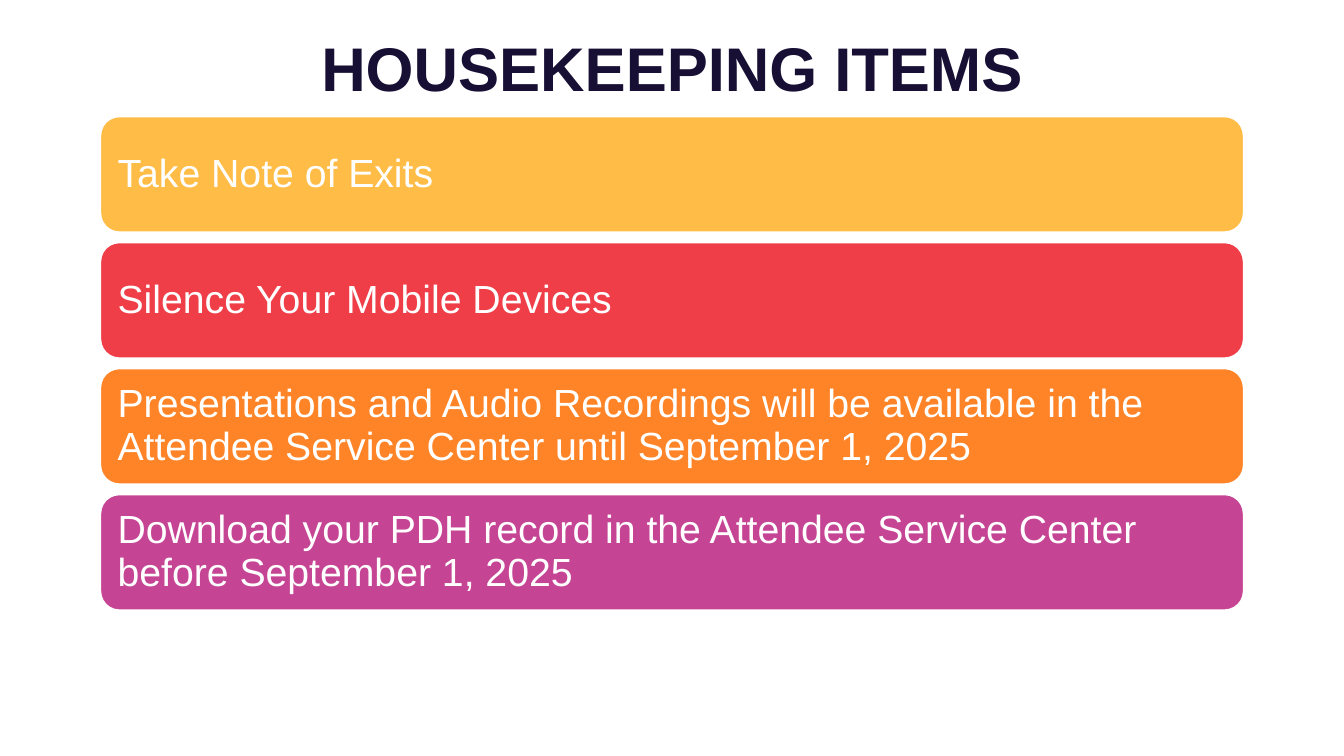
from dataclasses import dataclass

from pptx import Presentation
from pptx import util as u
from pptx.dml import color
from pptx.enum import shapes, text


@dataclass(frozen=True)
class Theme:
    font: str = "Arial"
    title_size: int = 44
    item_size: int = 28
    title_color: str = "180F34"
    white: str = "FFFFFF"


THEME = Theme()

ITEMS = [
    ("Take Note of Exits", "FFBD47"),
    ("Silence Your Mobile Devices", "EF3E47"),
    ("Presentations and Audio Recordings will be available in the "
     "Attendee Service Center until September 1, 2025", "FF8427"),
    ("Download your PDH record in the Attendee Service Center "
     "before September 1, 2025", "C64494"),
]


def rgb(value):
    return color.RGBColor.from_string(value)


def write_text(shape, words, *, size, fill, bold=False,
               align=text.PP_ALIGN.LEFT, spacing=1.0, insets=(0.1, 0.05)):
    """Put one formatted paragraph, vertically centred, into a shape."""
    frame = shape.text_frame
    frame.word_wrap = True
    frame.vertical_anchor = text.MSO_ANCHOR.MIDDLE
    frame.margin_left = frame.margin_right = u.Inches(insets[0])
    frame.margin_top = frame.margin_bottom = u.Inches(insets[1])
    paragraph = frame.paragraphs[0]
    paragraph.alignment = align
    paragraph.line_spacing = spacing
    run = paragraph.add_run()
    run.text = words
    run.font.name = THEME.font
    run.font.size = u.Pt(size)
    run.font.bold = bold
    run.font.color.rgb = rgb(fill)


def add_title(slide, words, left, top, width, height):
    box = slide.shapes.add_textbox(*map(u.Inches, (left, top, width, height)))
    write_text(box, words, size=THEME.title_size, fill=THEME.title_color,
               bold=True, align=text.PP_ALIGN.CENTER)


def add_item_bars(slide, items, left, top, width, height, gap=0.09):
    """Stack equal rounded bars, one per item, in the given box."""
    bar_height = (height - gap * (len(items) - 1)) / len(items)
    for index, (words, fill) in enumerate(items):
        bar_top = top + index * (bar_height + gap)
        bar = slide.shapes.add_shape(
            shapes.MSO_SHAPE.ROUNDED_RECTANGLE,
            *map(u.Inches, (left, bar_top, width, bar_height)))
        bar.shadow.inherit = False
        bar.fill.solid()
        bar.fill.fore_color.rgb = rgb(fill)
        bar.line.color.rgb = rgb(THEME.white)
        bar.line.width = u.Pt(2)
        write_text(bar, words, size=THEME.item_size, fill=THEME.white,
                   spacing=0.9, insets=(0.12, 0.12))


def main():
    presentation = Presentation()
    presentation.slide_width = u.Inches(13.33)
    presentation.slide_height = u.Inches(7.5)
    slide = presentation.slides.add_slide(presentation.slide_layouts[6])

    # Housekeeping list
    add_item_bars(slide, ITEMS, 0.99, 1.15, 11.35, 4.91)
    # Heading
    add_title(slide, "HOUSEKEEPING ITEMS", 0.92, 0.21, 11.5, 0.9)

    presentation.save("out.pptx")


if __name__ == "__main__":
    main()
